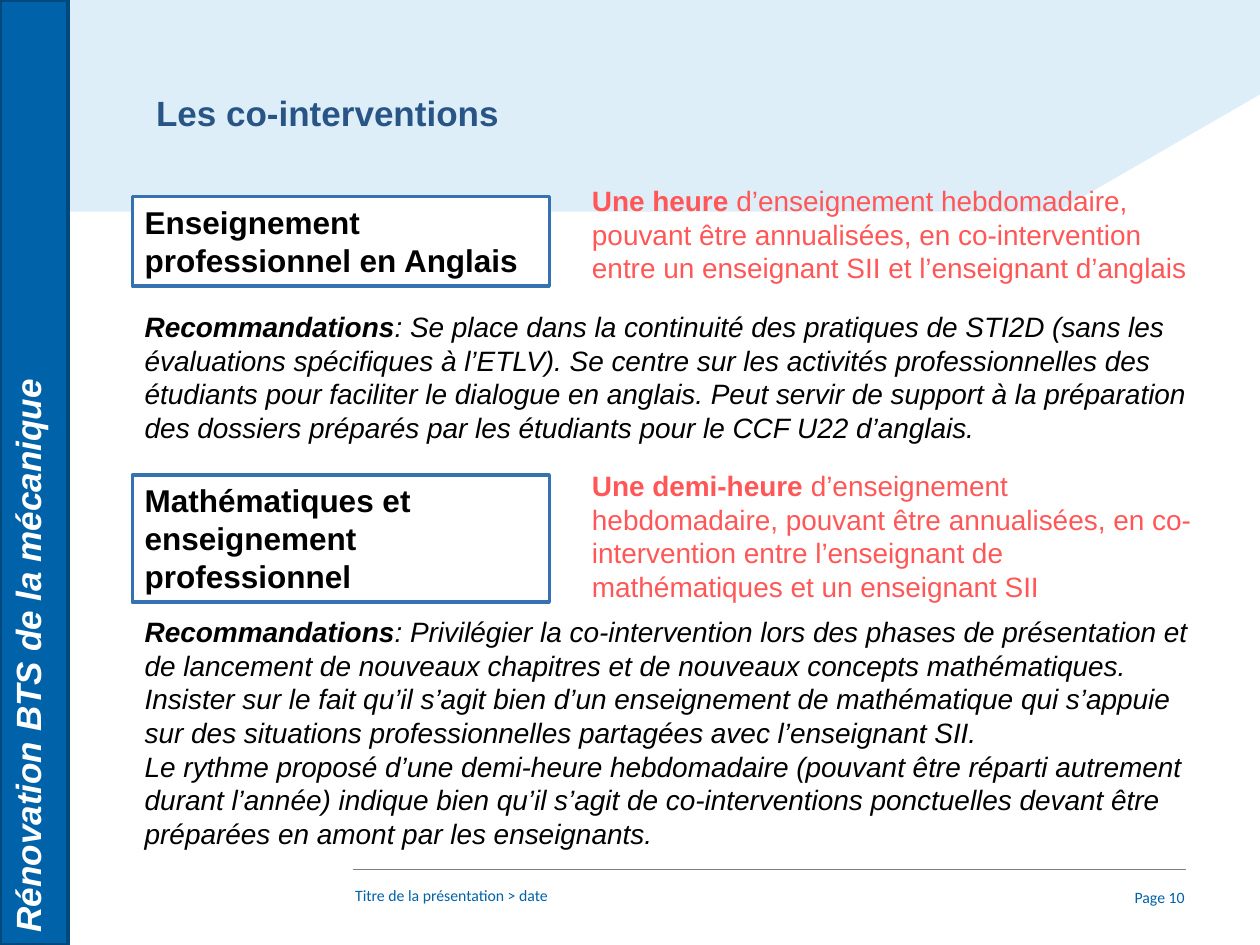
from pptx import Presentation
from pptx.dml.color import RGBColor
from pptx.enum.shapes import MSO_CONNECTOR, MSO_SHAPE
from pptx.enum.text import MSO_ANCHOR, PP_ALIGN
from pptx.oxml.ns import qn
from pptx.util import Inches, Pt
from lxml import etree

BLUE, BORDER, CORAL = "0062A8", "3671B2", "FF5758"
LEFT, RIGHT_COLUMN = 1.05, 4.6
LABEL_WIDTH, DETAIL_WIDTH, FULL_WIDTH = 3.31, 5, 8.55
BAND = [(10, 0), (0, 0), (0, 1.68), (8.39, 1.68), (10, 0.75)]

# Each section: label, detail and advice, with (top, height) of each part.
# A paragraph is a list of (text, bold) runs.
SECTIONS = [
    {
        "label": ("Enseignement professionnel en Anglais", 1.56, 0.71),
        "detail": ([[
            ("Une heure ", True),
            ("d’enseignement hebdomadaire, pouvant être annualisées, en co-intervention "
             "entre un enseignant SII et l’enseignant d’anglais", False),
        ]], 1.41, 0.91),
        "advice": ([[
            ("Recommandations", True),
            (": Se place dans la continuité des pratiques de STI2D (sans les évaluations "
             "spécifiques à l’ETLV). Se centre sur les activités professionnelles des "
             "étudiants pour faciliter le dialogue en anglais. Peut servir de support à la "
             "préparation des dossiers préparés par les étudiants pour le CCF U22 d’anglais.",
             False),
        ]], 2.41, 1.18),
    },
    {
        "label": ("Mathématiques et enseignement professionnel", 3.77, 1.01),
        "detail": ([[
            ("Une demi-heure ", True),
            ("d’enseignement hebdomadaire, pouvant être annualisées, en co-intervention "
             "entre l’enseignant de mathématiques et un enseignant SII", False),
        ]], 3.67, 1.18),
        "advice": ([
            [("Recommandations", True),
             (": Privilégier la co-intervention lors des phases de présentation et de "
              "lancement de nouveaux chapitres et de nouveaux concepts mathématiques.", False)],
            [("Insister sur le fait qu’il s’agit bien d’un enseignement de mathématique qui "
              "s’appuie sur des situations professionnelles partagées avec l’enseignant SII.",
              False)],
            [("Le rythme proposé d’une demi-heure hebdomadaire (pouvant être réparti "
              "autrement durant l’année) indique bien qu’il s’agit de co-interventions "
              "ponctuelles devant être préparées en amont par les enseignants.", False)],
        ], 4.83, 1.99),
    },
]


def rgb(value):
    return RGBColor.from_string(value)


def write(shape, paragraphs, size, color, font="Arial", italic=False,
          align=PP_ALIGN.LEFT, anchor=MSO_ANCHOR.TOP):
    frame = shape.text_frame
    frame.word_wrap = True
    frame.vertical_anchor = anchor
    for index, runs in enumerate(paragraphs):
        paragraph = frame.add_paragraph() if index else frame.paragraphs[0]
        paragraph.alignment = align
        for text, bold in runs:
            run = paragraph.add_run()
            run.text = text
            run.font.name, run.font.size = font, Pt(size)
            run.font.bold, run.font.italic = bold, italic
            run.font.color.rgb = rgb(color)


def add_text(slide, box, paragraphs, size, color, **style):
    shape = slide.shapes.add_textbox(*map(Inches, box))
    write(shape, paragraphs, size, color, **style)


def paint(shape, fill, line=None):
    shape.shadow.inherit = False
    shape.fill.solid()
    shape.fill.fore_color.rgb = rgb(fill)
    if line:
        shape.line.color.rgb = rgb(line)
        shape.line.width = Pt(2)
    else:
        shape.line.fill.background()


def add_box(slide, box, fill, line):
    shape = slide.shapes.add_shape(MSO_SHAPE.RECTANGLE, *map(Inches, box))
    paint(shape, fill, line)
    return shape


def add_background(slide):
    builder = slide.shapes.build_freeform(*map(Inches, BAND[0]), scale=1.0)
    builder.add_line_segments([tuple(map(Inches, point)) for point in BAND[1:]], close=True)
    paint(builder.convert_to_shape(), "DEEEF8")


def add_footer(slide):
    style = {"size": 9, "color": BLUE, "font": "Calibri"}
    add_text(slide, (2.72, 6.98, 5.91, 0.4), [[("Titre de la présentation > date", False)]], **style)
    rule = slide.shapes.add_connector(
        MSO_CONNECTOR.STRAIGHT, *map(Inches, (2.8, 6.9, 9.41, 6.9)))
    rule.line.color.rgb = rgb("7F7F7F")
    rule.line.width = Pt(0.5)
    etree.SubElement(rule.element.spPr, qn("a:effectLst"))
    add_text(slide, (8.62, 6.95, 0.88, 0.34), [[("Page 10", False)]],
             align=PP_ALIGN.RIGHT, anchor=MSO_ANCHOR.MIDDLE, **style)


def add_side_banner(slide):
    banner = add_box(slide, (0, 0, 0.54, 7.5), BLUE, "00497C")
    write(banner, [[("Rénovation BTS de la mécanique", True)]], 20, "FFFFFF", italic=True)
    banner.text_frame._txBody.bodyPr.set("vert", "vert270")


def add_section(slide, section):
    text, top, height = section["label"]
    label = add_box(slide, (LEFT, top, LABEL_WIDTH, height), "FFFFFF", BORDER)
    write(label, [[(text, True)]], 18, "000000")
    paragraphs, top, height = section["detail"]
    add_text(slide, (RIGHT_COLUMN, top, DETAIL_WIDTH, height), paragraphs, 16, CORAL)
    paragraphs, top, height = section["advice"]
    add_text(slide, (LEFT, top, FULL_WIDTH, height), paragraphs, 16, "000000", italic=True)


def main():
    presentation = Presentation()
    presentation.slide_width, presentation.slide_height = Inches(10), Inches(7.5)
    slide = presentation.slides.add_slide(presentation.slide_layouts[6])
    add_background(slide)
    add_footer(slide)
    add_side_banner(slide)
    for section in SECTIONS:
        add_section(slide, section)
    add_text(slide, (1.14, 0.68, 7.72, 0.44), [[("Les co-interventions", True)]], 20, "285586")
    presentation.save("out.pptx")


if __name__ == "__main__":
    main()
